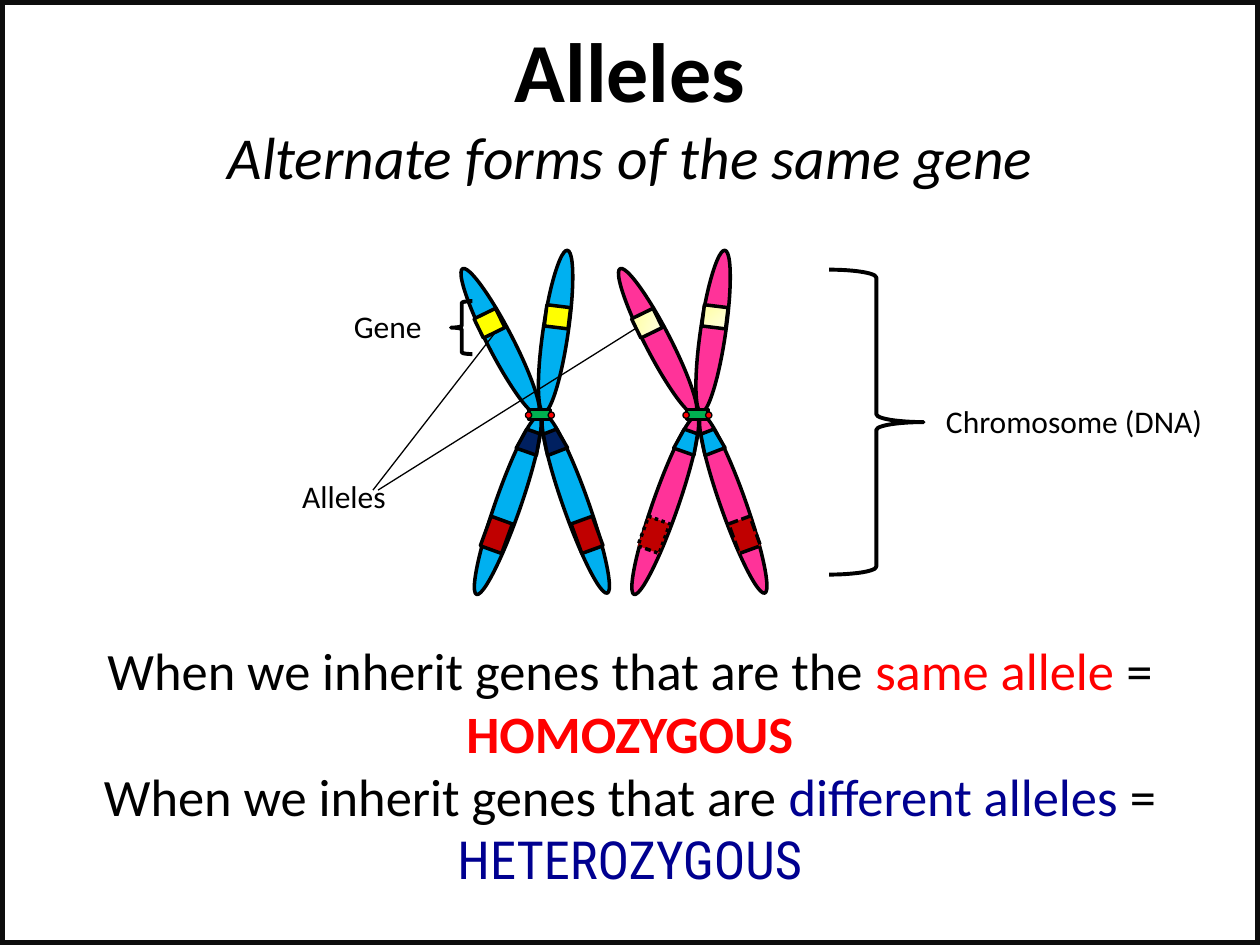
"""Build a slide on alleles with a homologous pair of chromosomes."""
import pptx
import pptx.dml.color
import pptx.enum.dml
import pptx.enum.shapes
import pptx.enum.text
import pptx.oxml.ns
import pptx.util
from lxml import etree

Inches = pptx.util.Inches
Pt = pptx.util.Pt
SHAPES = pptx.enum.shapes.MSO_SHAPE
DASHES = pptx.enum.dml.MSO_LINE
ALIGN = pptx.enum.text.PP_ALIGN
ANCHOR = pptx.enum.text.MSO_ANCHOR

COLORS = {
    "black": "000000", "frame": "0D0D0D", "red": "FF0000", "navy": "000090",
    "blue": "00B0F0", "pink": "FF3399", "green": "00B050", "yellow": "FFFF00",
    "crimson": "C00000", "midnight": "002060",
    "cream start": "FFFFA0", "cream end": "FFFFE3",
}

TITLE = [
    [("Alleles", {"size": 48, "bold": True})],
    [("Alternate forms of the same gene", {"size": 34, "italic": True})],
]
DEFINITIONS = [
    [("When we inherit genes that are the ", {}),
     ("same allele ", {"color": "red"}),
     ("= ", {}),
     ("HOMOZYGOUS", {"color": "red", "bold": True})],
    [("When we inherit genes that are ", {}),
     ("different alleles ", {"color": "navy"}),
     ("= ", {}),
     ("HETEROZYGOUS", {"color": "navy", "font": "Roboto Condensed"})],
]
LABELS = [
    ("Chromosome (DNA)", (7.41, 3.14, 2.26, 0.71)),
    ("Gene", (2.71, 2.39, 0.75, 0.4)),
    ("Alleles", (2.3, 3.74, 0.87, 0.4)),
]
BRACES = [
    (SHAPES.RIGHT_BRACE, (6.58, 2.14, 0.75, 2.42)),
    (SHAPES.LEFT_BRACE, (3.58, 2.39, 0.17, 0.42)),
]
ALLELE_POINTERS = [((3.93, 2.64), (2.96, 3.89)), ((5.12, 2.56), (3, 3.89))]

CHROMOSOME_PARTS = [
    ("arm", SHAPES.OVAL, (3.87, 2.06, 0.2, 1.3), 332.7),
    ("arm", SHAPES.OVAL, (3.93, 3.26, 0.2, 1.5), 19.3),
    ("arm", SHAPES.OVAL, (4.31, 1.98, 0.2, 1.3), 8.3),
    ("arm", SHAPES.OVAL, (4.47, 3.25, 0.2, 1.5), 340.5),
    ("centromere", SHAPES.RECTANGLE, (4.2, 3.25, 0.17, 0.08), 0),
    ("kinetochore", SHAPES.OVAL, (4.17, 3.27, 0.05, 0.05), 0),
    ("kinetochore", SHAPES.OVAL, (4.35, 3.27, 0.05, 0.05), 0),
    ("upper gene", SHAPES.RECTANGLE, (3.79, 2.48, 0.19, 0.17), 334),
    ("upper gene", SHAPES.RECTANGLE, (4.33, 2.43, 0.19, 0.17), 7),
    ("left lower gene", SHAPES.RECTANGLE, (3.85, 4.12, 0.18, 0.25), 20),
    ("right lower gene", SHAPES.RECTANGLE, (4.57, 4.12, 0.18, 0.25), 340),
    ("middle gene", SHAPES.TRAPEZOID, (4.12, 3.42, 0.17, 0.17), 19.4),
    ("middle gene", SHAPES.TRAPEZOID, (4.31, 3.42, 0.17, 0.17), 339),
]
SHARED_FILLS = {
    "centromere": "green", "kinetochore": "red",
    "left lower gene": "crimson", "right lower gene": "crimson",
}
BLUE_FILLS = {**SHARED_FILLS, "arm": "blue", "upper gene": "yellow", "middle gene": "midnight"}
PINK_FILLS = {**SHARED_FILLS, "arm": "pink", "upper gene": ("cream start", "cream end"),
              "middle gene": "blue"}
PINK_DASHES = {"left lower gene": DASHES.ROUND_DOT, "right lower gene": DASHES.SQUARE_DOT}
SYSTEM_DASHES = {"left lower gene": "sysDot", "right lower gene": "sysDash"}
PAIR_OFFSET = 1.25


def rgb(name):
    return pptx.dml.color.RGBColor.from_string(COLORS[name])


def add_text(slide, box, paragraphs, size=18, align=ALIGN.LEFT, anchor=ANCHOR.TOP, wrap=False):
    frame = slide.shapes.add_textbox(*map(Inches, box)).text_frame
    frame.word_wrap = wrap
    frame.vertical_anchor = anchor
    for index, runs in enumerate(paragraphs):
        paragraph = frame.add_paragraph() if index else frame.paragraphs[0]
        paragraph.alignment = align
        for words, style in runs:
            run = paragraph.add_run()
            run.text = words
            run.font.name = style.get("font", "Calibri")
            run.font.size = Pt(style.get("size", size))
            run.font.bold = style.get("bold", False)
            run.font.italic = style.get("italic", False)
            run.font.color.rgb = rgb(style.get("color", "black"))


def add_outline(slide, kind, box, fill=None, line="black", width=2, rotation=0):
    outline = slide.shapes.add_shape(kind, *map(Inches, box))
    outline.shadow.inherit = False
    outline.rotation = rotation
    outline.line.color.rgb = rgb(line)
    outline.line.width = Pt(width)
    if fill is None:
        outline.fill.background()
    elif isinstance(fill, tuple):
        outline.fill.gradient()
        outline.fill.gradient_angle = 315
        for stop, color in zip(outline.fill.gradient_stops, fill):
            stop.color.rgb = rgb(color)
    else:
        outline.fill.solid()
        outline.fill.fore_color.rgb = rgb(fill)
    return outline


def add_chromosome(slide, fills, offset=0, dashes=None):
    for role, kind, (left, top, width, height), rotation in CHROMOSOME_PARTS:
        part = add_outline(slide, kind, (left + offset, top, width, height), fills[role],
                           width=0.75 if role == "kinetochore" else 2, rotation=rotation)
        if kind == SHAPES.TRAPEZOID:
            part.adjustments[0] = 0.171
        if dashes and role in dashes:
            part.line.dash_style = dashes[role]


def add_pointer(slide, start, end):
    pointer = slide.shapes.add_connector(
        pptx.enum.shapes.MSO_CONNECTOR.STRAIGHT, *map(Inches, start + end))
    pointer.line.color.rgb = rgb("black")
    pointer.line.width = Pt(0.75)
    etree.SubElement(pointer._element.spPr, pptx.oxml.ns.qn("a:effectLst"))


def main():
    deck = pptx.Presentation()
    deck.slide_width, deck.slide_height = Inches(10), Inches(7.5)
    slide = deck.slides.add_slide(deck.slide_layouts[6])
    add_text(slide, (1.59, 0.1, 6.82, 1.48), TITLE, align=ALIGN.CENTER)
    add_text(slide, (0.25, 3.98, 9.5, 3.13), DEFINITIONS, size=30,
             align=ALIGN.CENTER, anchor=ANCHOR.BOTTOM, wrap=True)
    add_chromosome(slide, BLUE_FILLS)
    for kind, box in BRACES:
        add_outline(slide, kind, box, width=2.25)
    for words, box in LABELS:
        add_text(slide, box, [[(words, {})]])
    for start, end in ALLELE_POINTERS:
        add_pointer(slide, start, end)
    add_chromosome(slide, PINK_FILLS, PAIR_OFFSET, PINK_DASHES)
    add_outline(slide, SHAPES.RECTANGLE, (0, 0, 10, 7.5), line="frame", width=6)
    deck.save("out.pptx")


if __name__ == "__main__":
    main()
